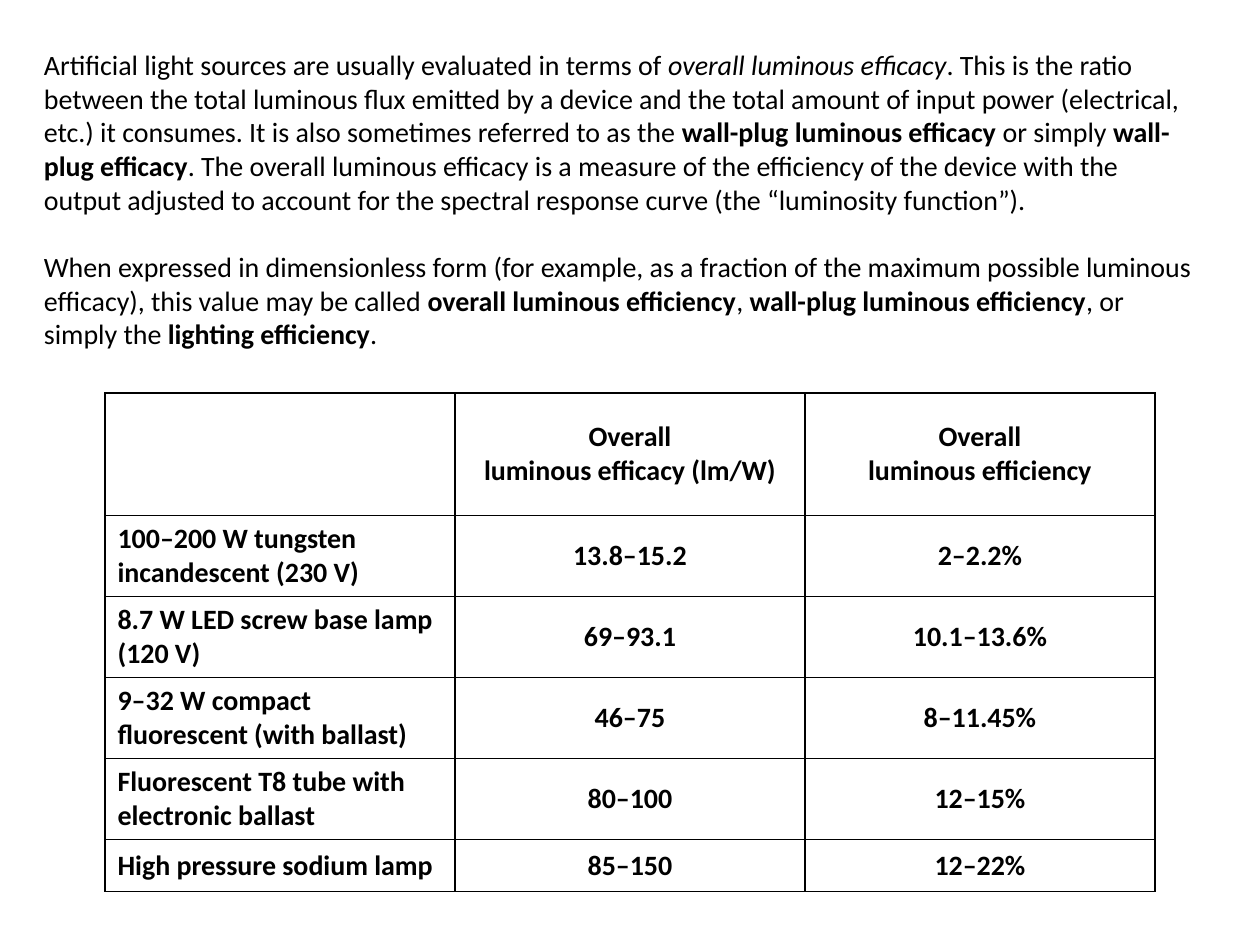
from lxml.etree import SubElement
from pptx import Presentation
from pptx.dml.color import RGBColor
from pptx.enum.text import MSO_ANCHOR, MSO_AUTO_SIZE, PP_ALIGN
from pptx.oxml.ns import qn
from pptx.util import Inches, Pt

BLACK = RGBColor(0, 0, 0)
WIDE, HIGH = Inches(10), Inches(7.5)
BASE = {"name": "Calibri", "size": Pt(16)}
PLAIN = {**BASE, "bold": False, "italic": False}
BOLD = {**BASE, "bold": True}
SLANT = {**BASE, "italic": True}

PROSE = [
    [
        ("Artificial light sources are usually evaluated in terms of ", PLAIN),
        ("overall luminous efficacy", SLANT),
        (". This is the ratio between the total luminous flux emitted by a device "
         "and the total amount of input power (electrical, etc.) it consumes. "
         "It is also sometimes referred to as the ", PLAIN),
        ("wall-plug luminous efficacy", BOLD),
        (" or simply ", PLAIN),
        ("wall-plug efficacy", BOLD),
        (". The overall luminous efficacy is a measure of the efficiency of the "
         "device with the output adjusted to account for the spectral response "
         "curve (the “luminosity function”).", PLAIN),
    ],
    [
        ("When expressed in dimensionless form (for example, as a fraction of the "
         "maximum possible luminous efficacy), this value may be called ", PLAIN),
        ("overall luminous efficiency", BOLD),
        (", ", PLAIN),
        ("wall-plug luminous efficiency", BOLD),
        (", or simply the ", PLAIN),
        ("lighting efficiency", BOLD),
        (".", PLAIN),
    ],
]

LAMPS = [
    ("", "Overall\nluminous efficacy (lm/W)", "Overall\nluminous efficiency"),
    ("100–200 W tungsten incandescent (230 V)", "13.8–15.2", "2–2.2%"),
    ("8.7 W LED screw base lamp (120 V)", "69–93.1", "10.1–13.6%"),
    ("9–32 W compact fluorescent (with ballast)", "46–75", "8–11.45%"),
    ("Fluorescent T8 tube with electronic ballast", "80–100", "12–15%"),
    ("High pressure sodium lamp", "85–150", "12–22%"),
]


def style(font, look):
    for key, value in look.items():
        setattr(font, key, value)
    font.color.rgb = BLACK


def add_prose(slide, left, top, width, height):
    frame = slide.shapes.add_textbox(left, top, width, height).text_frame
    frame.word_wrap = True
    frame.auto_size = MSO_AUTO_SIZE.SHAPE_TO_FIT_TEXT
    for index, parts in enumerate(PROSE):
        para = frame.add_paragraph() if index else frame.paragraphs[0]
        para.space_before = Pt(19.5 * index)
        for text, look in parts:
            run = para.add_run()
            run.text = text
            style(run.font, look)


def add_edges(cell):
    props = cell._tc.get_or_add_tcPr()
    for index, side in enumerate(("a:lnL", "a:lnR", "a:lnT", "a:lnB")):
        line = SubElement(props, qn(side), w=str(Pt(1)))
        props.insert(index, line)
        fill = SubElement(line, qn("a:solidFill"))
        SubElement(fill, qn("a:srgbClr"), val=str(BLACK))


def fill_cell(cell, text, align):
    cell.fill.background()
    cell.vertical_anchor = MSO_ANCHOR.MIDDLE
    add_edges(cell)
    para = cell.text_frame.paragraphs[0]
    para.text = text
    para.alignment = align
    for run in para.runs:
        style(run.font, BOLD)


def add_grid(slide, left, top, width, height):
    frame = slide.shapes.add_table(len(LAMPS), len(LAMPS[0]), left, top, width, height)
    table = frame.table
    table.first_row = table.horz_banding = False
    for row, texts in enumerate(LAMPS):
        table.rows[row].height = Inches(0.41 if row else 0.97)
        for col, text in enumerate(texts):
            align = PP_ALIGN.CENTER if col else PP_ALIGN.LEFT
            fill_cell(table.cell(row, col), text, align)
    frame.height = height


def main():
    deck = Presentation()
    deck.slide_width, deck.slide_height = WIDE, HIGH
    slide = deck.slides.add_slide(deck.slide_layouts[6])
    add_grid(slide, WIDE // 12, Inches(3.12), WIDE * 10 // 12, Inches(3.91))
    add_prose(slide, WIDE // 40, Inches(0.33), WIDE * 28 // 30, Inches(2.52))
    deck.save("out.pptx")


if __name__ == "__main__":
    main()
